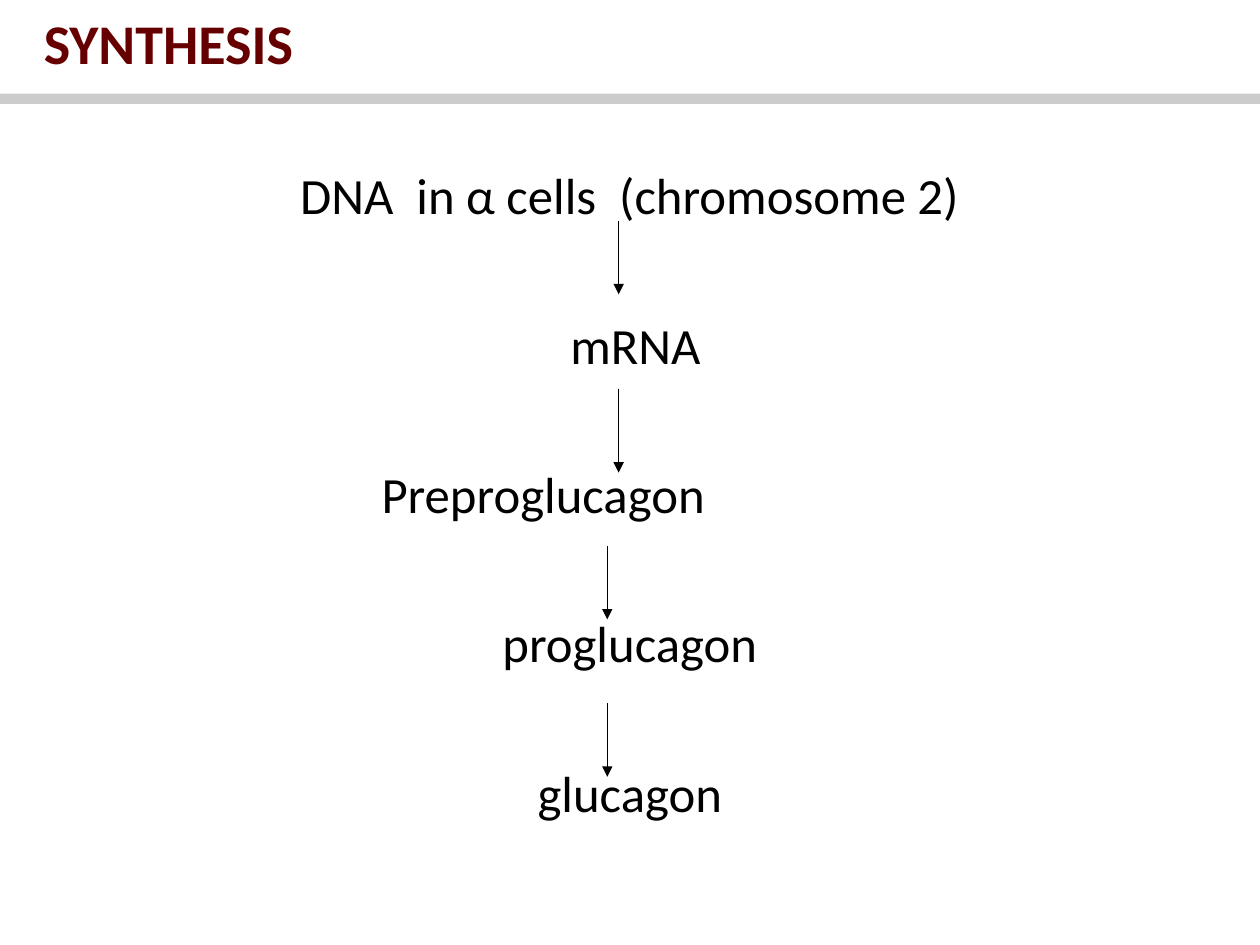
from collections import namedtuple
from dataclasses import dataclass

from lxml import etree
from pptx import Presentation
from pptx.dml import color
from pptx.enum import shapes, text
from pptx.oxml import ns
from pptx import util as u

Box = namedtuple("Box", "x y w h")


@dataclass(frozen=True)
class Theme:
    """Colours, font and type sizes of the slide."""
    font: str = "Calibri"
    head: str = "660000"
    rule: str = "CCCCCC"
    ink: str = "000000"
    title: int = 32
    body: int = 29
    line: float = 0.75
    lead: float = 0.9
    gap: int = 54


LOOK = Theme()
STEPS = [
    ("DNA  in α cells  (chromosome 2)", text.PP_ALIGN.CENTER, 0),
    ("mRNA", text.PP_ALIGN.CENTER, 0.01),
    ("Preproglucagon", text.PP_ALIGN.LEFT, 0.27),
    ("proglucagon", text.PP_ALIGN.CENTER, 0),
    ("glucagon", text.PP_ALIGN.CENTER, 0),
]
ARROWS = [
    (0.49, 0.105, 0.21),
    (0.49, 0.345, 0.465),
    (0.48, 0.57, 0.675),
    (0.48, 0.795, 0.9),
]


def rgb(code):
    """Return the colour for a hex code."""
    return color.RGBColor.from_string(code)


def part(box, x, y, w, h):
    """Return a share of a box."""
    return Box(*(int(v) for v in (box.x + x * box.w, box.y + y * box.h,
                                  w * box.w, h * box.h)))


def frame(slide, box):
    """Add a wrapping text box anchored in the middle."""
    body = slide.shapes.add_textbox(*box).text_frame
    body.word_wrap = True
    body.vertical_anchor = text.MSO_ANCHOR.MIDDLE
    return body


def write(para, words, size, ink, bold=False):
    """Fill and style one paragraph."""
    para.text = words
    para.line_spacing = LOOK.lead
    font = para.font
    font.name, font.size, font.bold = LOOK.font, u.Pt(size), bold
    font.color.rgb = rgb(ink)


def header(slide, box):
    """Draw the title and the grey rule below it."""
    rule = slide.shapes.add_shape(shapes.MSO_SHAPE.RECTANGLE,
                                  *part(box, 0, 0.9, 1, 0.1))
    rule.shadow.inherit = False
    rule.fill.solid()
    rule.fill.fore_color.rgb = rgb(LOOK.rule)
    rule.line.fill.background()
    body = frame(slide, part(box, 0.025, 0.1, 0.958, 0.7))
    write(body.paragraphs[0], "SYNTHESIS", LOOK.title, LOOK.head, True)


def arrow(slide, x, top, end):
    """Draw a vertical arrow pointing down."""
    line = slide.shapes.add_connector(shapes.MSO_CONNECTOR.STRAIGHT,
                                      x, top, x, end)
    line.line.color.rgb = rgb(LOOK.ink)
    line.line.width = u.Pt(LOOK.line)
    tail = etree.SubElement(line.line._get_or_add_ln(), ns.qn("a:tailEnd"))
    tail.set("type", "triangle")
    etree.SubElement(line._element.spPr, ns.qn("a:effectLst"))


def chain(slide, box):
    """Draw the steps from gene to hormone and the arrows between them."""
    body = frame(slide, box)
    for row, (words, align, inset) in enumerate(STEPS):
        para = body.add_paragraph() if row else body.paragraphs[0]
        write(para, words, LOOK.body, LOOK.ink)
        para.alignment = align
        para.space_before = u.Pt(LOOK.gap if row else 0)
        para._p.get_or_add_pPr().set("marL", str(int(inset * box.w)))
    for x, top, end in ARROWS:
        spot = part(box, x, top, 0, end - top)
        arrow(slide, spot.x, spot.y, spot.y + spot.h)


def main():
    """Build and save the slide."""
    deck = Presentation()
    deck.slide_width, deck.slide_height = u.Inches(10), u.Inches(7.5)
    slide = deck.slides.add_slide(deck.slide_layouts[6])
    page = Box(0, 0, deck.slide_width, deck.slide_height)
    header(slide, part(page, 0, 0, 1, 0.11))
    chain(slide, part(page, 0.05, 0.156, 0.9, 0.74))
    deck.save("out.pptx")


if __name__ == "__main__":
    main()
